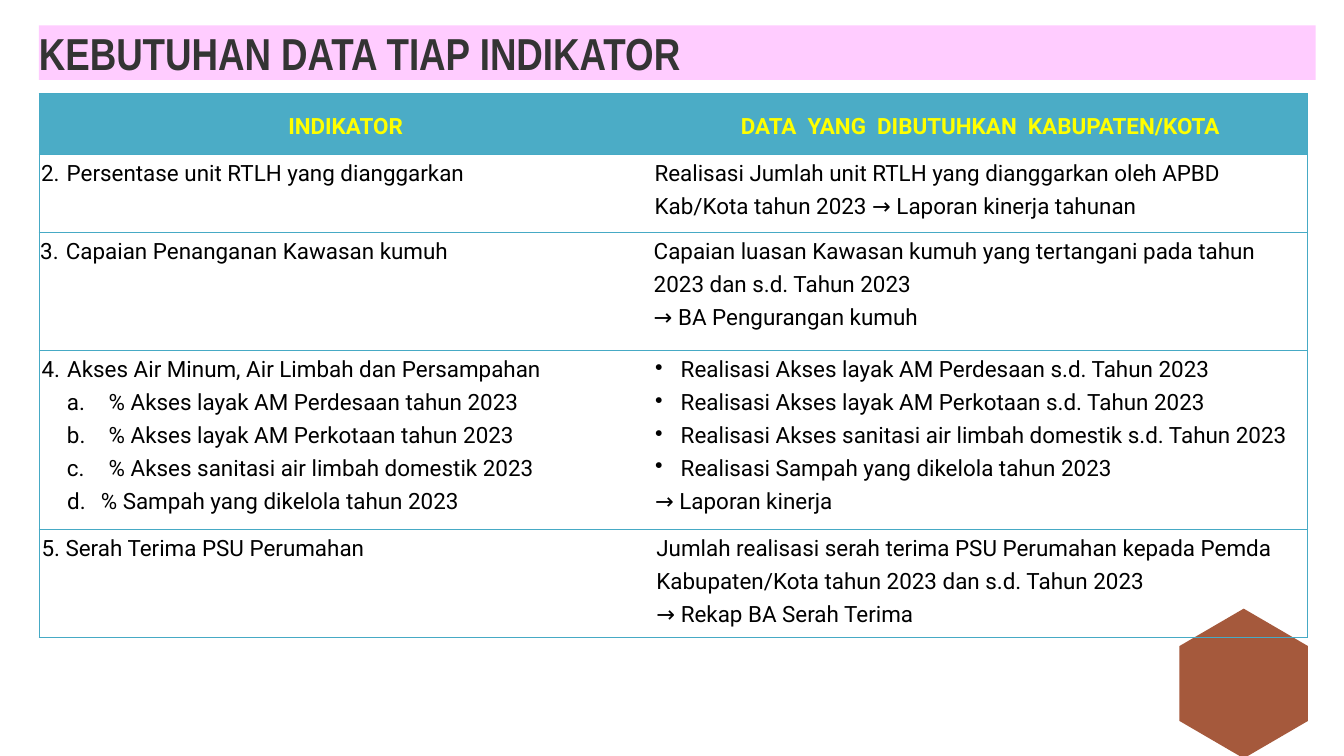
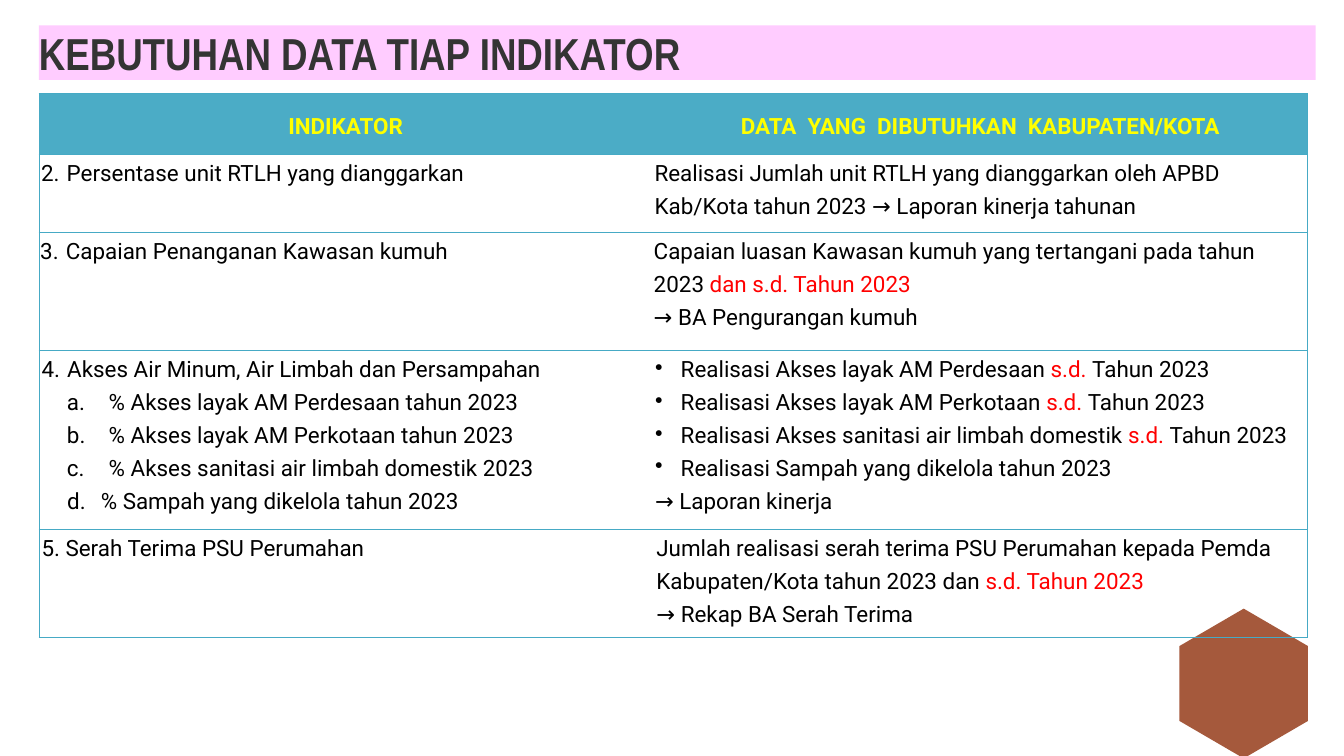
import lxml.etree
import pptx
import pptx.dml.color
import pptx.enum.text
import pptx.oxml.ns
import pptx.util

Cm = pptx.util.Cm
Pt = pptx.util.Pt
qn = pptx.oxml.ns.qn
ALIGN = pptx.enum.text.PP_ALIGN
ANCHOR = pptx.enum.text.MSO_ANCHOR

COLORS = {
    "title": "343434",
    "title_band": "FFCCFF",
    "hexagon": "A5593C",
    "header": "4BACC6",
    "header_text": "FFFF00",
    "border": "46AAC5",
    "text": "000000",
    "emphasis": "FF0000",
}
NO_GRID_STYLE = "{2D5ABB26-0587-4C30-8999-92F81FD0307C}"

# Paragraph kinds; left, indent and tab are in centimetres
PARAGRAPHS = {
    "header": {"alignment": ALIGN.CENTER},
    "plain": {"tab": 0.53},
    "inset": {"left": 0.05, "tab": 0.53},
    "number": {"left": 0.97, "indent": -0.97, "tab": 0.97},
    "last_number": {"left": 0.97, "indent": -0.97, "tab": 1.57, "level": 1},
    "letter": {"left": 1.57, "indent": -0.61, "tab": 2.54, "level": 1,
               "bullet": ("a:buAutoNum", {"type": "alphaLcPeriod"})},
    "last_letter": {"left": 0.97, "tab": 2.54, "level": 1},
    "bullet": {"left": 0.97, "indent": -0.97, "tab": 0.53,
               "bullet": ("a:buChar", {"char": "•"})},
}

TITLE = "KEBUTUHAN DATA TIAP INDIKATOR"
COLUMN_WIDTHS = [23.19, 24.77]
# Each row: height, side inset, then the paragraphs of each cell.
# Words between asterisks are those that can be emphasised.
ROWS = [
    (2.29, 0.08,
     [("header", "INDIKATOR")],
     [("header", "DATA  YANG  DIBUTUHKAN  KABUPATEN/KOTA")]),
    (2.97, 0.08,
     [("number", "2. \tPersentase unit RTLH yang dianggarkan")],
     [("plain", "Realisasi Jumlah unit RTLH yang dianggarkan oleh APBD "
                "Kab/Kota tahun 2023 → Laporan kinerja tahunan")]),
    (4.45, 0.05,
     [("number", "3.\tCapaian Penanganan Kawasan kumuh")],
     [("plain", "Capaian luasan Kawasan kumuh yang tertangani pada tahun "
                "2023 *dan s.d. Tahun 2023*"),
      ("plain", "→ BA Pengurangan kumuh")]),
    (6.78, 0.1,
     [("number", "4.\tAkses Air Minum, Air Limbah dan Persampahan"),
      ("letter", "\t% Akses layak AM Perdesaan tahun 2023"),
      ("letter", "\t% Akses layak AM Perkotaan tahun 2023"),
      ("letter", "\t% Akses sanitasi air limbah domestik 2023"),
      ("last_letter", "d.\t% Sampah yang dikelola tahun 2023")],
     [("bullet", "Realisasi Akses layak AM Perdesaan *s.d. *Tahun 2023"),
      ("bullet", "Realisasi Akses layak AM Perkotaan *s.d. *Tahun 2023"),
      ("bullet", "Realisasi Akses sanitasi air limbah domestik *s.d. *Tahun 2023"),
      ("bullet", "Realisasi Sampah yang dikelola tahun 2023"),
      ("plain", "→ Laporan kinerja")]),
    (4.06, 0.1,
     [("last_number", "5. Serah Terima PSU Perumahan")],
     [("inset", "Jumlah realisasi serah terima PSU Perumahan kepada Pemda "
                "Kabupaten/Kota tahun 2023 dan *s.d. Tahun 2023*"),
      ("inset", "→ Rekap BA Serah Terima")]),
]


def set_values(target, values):
    for name, value in values.items():
        setattr(target, name, value)


def rgb(color):
    return pptx.dml.color.RGBColor.from_string(COLORS[color])


def add_element(parent, tag, attributes=None):
    return lxml.etree.SubElement(parent, qn(tag), attributes or {})


class Deck:
    """Holds the style and the current slide."""

    def __init__(self):
        self.presentation = pptx.Presentation()
        set_values(self.presentation,
                   {"slide_width": Cm(50.8), "slide_height": Cm(28.58)})
        self.slide = None

    def new_slide(self):
        layout = self.presentation.slide_layouts[6]
        self.slide = self.presentation.slides.add_slide(layout)

    def paint(self, shape, color):
        shape.shadow.inherit = False
        shape.fill.solid()
        shape.fill.fore_color.rgb = rgb(color)
        shape.line.fill.background()

    def run(self, paragraph, text, color, size=24, font="Roboto", bold=False):
        run = paragraph.add_run()
        run.text = text
        set_values(run.font, {"size": Pt(size), "name": font, "bold": bold})
        run.font.color.rgb = rgb(color)

    def hexagon(self, left, top, width, height):
        corners = [(0.5, 0), (1, 0.25), (1, 0.75), (0.5, 1), (0, 0.75), (0, 0.25)]
        points = [(Cm(left + x * width), Cm(top + y * height)) for x, y in corners]
        builder = self.slide.shapes.build_freeform(*points[0])
        builder.add_line_segments(points[1:], close=True)
        self.paint(builder.convert_to_shape(), "hexagon")

    def title(self, text):
        band = self.slide.shapes.add_shape(
            pptx.enum.shapes.MSO_SHAPE.RECTANGLE,
            Cm(1.47), Cm(0.96), Cm(48.26), Cm(2.06))
        self.paint(band, "title_band")
        frame = band.text_frame
        set_values(frame, {
            "margin_left": 0, "margin_top": 0, "margin_right": 0,
            "margin_bottom": 0, "word_wrap": True,
            "vertical_anchor": ANCHOR.TOP,
            "auto_size": pptx.enum.text.MSO_AUTO_SIZE.SHAPE_TO_FIT_TEXT})
        paragraph = frame.paragraphs[0]
        paragraph.alignment = ALIGN.LEFT
        self.run(paragraph, text, "title", 48, "Arial Narrow", True)

    def table(self, left, top, emphasise):
        heights = [row[0] for row in ROWS]
        table = self.slide.shapes.add_table(
            len(ROWS), len(COLUMN_WIDTHS), Cm(left), Cm(top),
            Cm(sum(COLUMN_WIDTHS)), Cm(sum(heights))).table
        set_values(table, {"first_row": False, "horz_banding": False})
        table._tbl.tblPr.find(qn("a:tableStyleId")).text = NO_GRID_STYLE
        for column, width in zip(table.columns, COLUMN_WIDTHS):
            column.width = Cm(width)
        for row_index, (height, inset, *cells) in enumerate(ROWS):
            table.rows[row_index].height = Cm(height)
            for column_index, paragraphs in enumerate(cells):
                cell = table.cell(row_index, column_index)
                is_header = row_index == 0
                set_values(cell, {
                    "margin_left": Cm(inset), "margin_right": Cm(inset),
                    "margin_top": 0, "margin_bottom": 0,
                    "vertical_anchor": ANCHOR.MIDDLE if is_header else ANCHOR.TOP})
                # The outer sides and every row line are drawn
                outer_side = "L" if column_index == 0 else "R"
                self.borders(cell, outer_side + "TB")
                if is_header:
                    cell.fill.solid()
                    cell.fill.fore_color.rgb = rgb("header")
                else:
                    cell.fill.background()
                self.cell_text(cell, paragraphs, emphasise)

    def borders(self, cell, sides):
        properties = cell._tc.get_or_add_tcPr()
        for side in "LRTB":
            line = add_element(properties, "a:ln" + side, {"w": str(Pt(0.75))})
            if side in sides:
                fill = add_element(line, "a:solidFill")
                add_element(fill, "a:srgbClr", {"val": COLORS["border"]})
            else:
                add_element(line, "a:noFill")

    def cell_text(self, cell, paragraphs, emphasise):
        frame = cell.text_frame
        for index, (kind, text) in enumerate(paragraphs):
            paragraph = frame.add_paragraph() if index else frame.paragraphs[0]
            self.paragraph_format(paragraph, PARAGRAPHS[kind])
            is_header = kind == "header"
            color = "header_text" if is_header else "text"
            parts = text.split("*") if emphasise else [text.replace("*", "")]
            for part_index, part in enumerate(parts):
                if part:
                    self.run(paragraph, part,
                             "emphasis" if part_index % 2 else color,
                             bold=is_header)

    def paragraph_format(self, paragraph, style):
        set_values(paragraph, {
            "line_spacing": 1.25,
            "level": style.get("level", 0),
            "alignment": style.get("alignment", ALIGN.LEFT)})
        properties = paragraph._p.get_or_add_pPr()
        properties.set("marL", str(Cm(style.get("left", 0))))
        properties.set("indent", str(Cm(style.get("indent", 0))))
        add_element(properties, *style.get("bullet", ("a:buNone",)))
        if "tab" in style:
            tabs = add_element(properties, "a:tabLst")
            add_element(tabs, "a:tab", {"pos": str(Cm(style["tab"])), "algn": "l"})


def main():
    deck = Deck()
    # The second slide marks the cumulative periods in red
    for emphasise in (False, True):
        deck.new_slide()
        deck.hexagon(44.58, 23.01, 4.86, 5.66)
        deck.title(TITLE)
        deck.table(1.47, 3.53, emphasise)
    deck.presentation.save("out.pptx")


if __name__ == "__main__":
    main()
